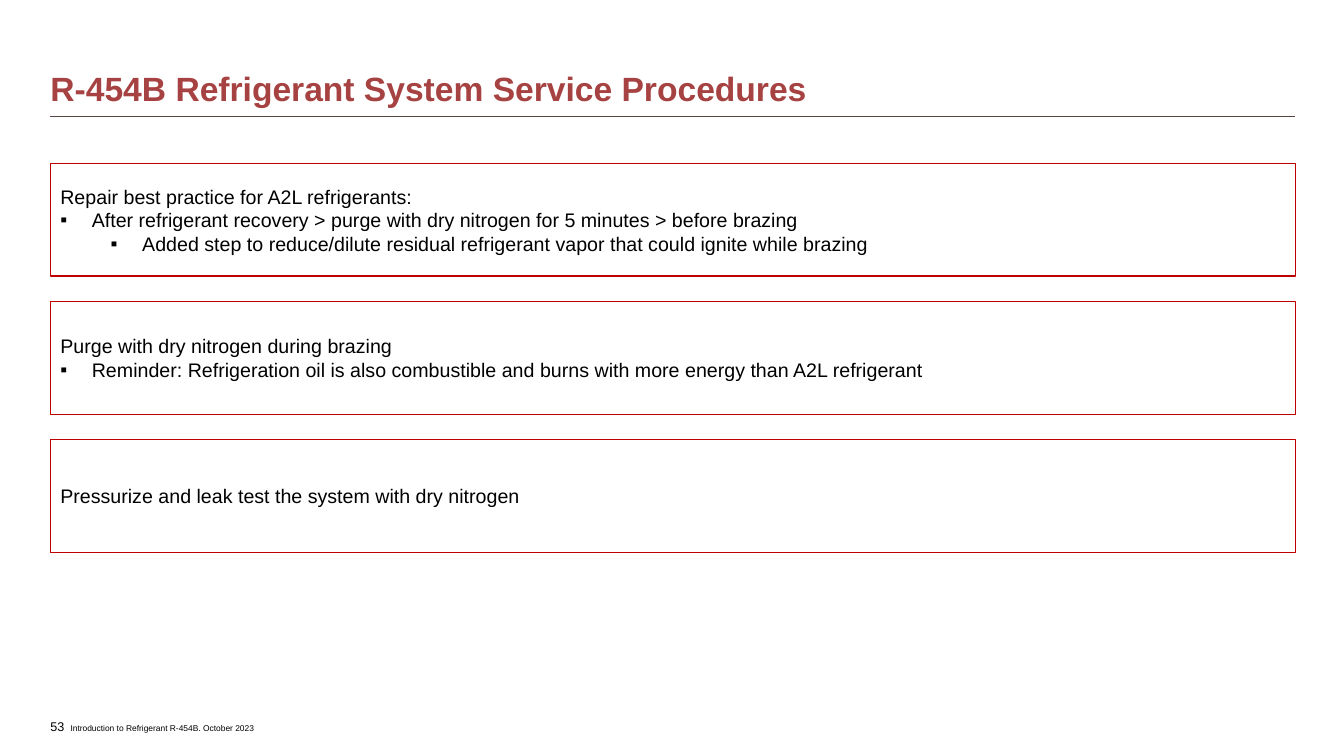
"""Build the R-454B refrigerant service procedures slide."""
from pptx import Presentation
from pptx.dml.color import RGBColor
from pptx.enum.shapes import MSO_CONNECTOR as Connector, MSO_SHAPE as Shape
from pptx.enum.text import MSO_ANCHOR as Anchor, MSO_AUTO_SIZE as AutoSize, PP_ALIGN as Align
from pptx.oxml.ns import qn
from pptx.util import Pt
from lxml.etree import SubElement

TITLE_RED = RGBColor(0xA6, 0x42, 0x41)
BOX_RED = RGBColor(0xC0, 0x00, 0x00)
RULE_GRAY = RGBColor(0x52, 0x47, 0x43)
BLACK = RGBColor(0x00, 0x00, 0x00)

LEFT, WIDTH = 36, 889.2
BOX_TOP, BOX_HEIGHT, BOX_PITCH = 116.64, 80.64, 98.64
HANGING = 22.5
LEVEL_STEP = 36

PROCEDURES = [
    [
        ("Repair best practice for A2L refrigerants:", None),
        ("After refrigerant recovery > purge with dry nitrogen for 5 minutes > before brazing", 0),
        ("Added step to reduce/dilute residual refrigerant vapor that could ignite while brazing", 1),
    ],
    [
        ("Purge with dry nitrogen during brazing", None),
        ("Reminder: Refrigeration oil is also combustible and burns with more energy than A2L refrigerant", 0),
    ],
    [("Pressurize and leak test the system with dry nitrogen", None)],
]


class SlideBuilder:
    """Hold the slide and its text style, and add each kind of element."""

    font_name = "Arial"
    flush_frame = {"margin_left": 0, "margin_top": 0, "margin_right": 0, "margin_bottom": 0,
                   "word_wrap": True, "auto_size": AutoSize.NONE}

    def __init__(self, slide):
        self.slide = slide

    def apply(self, target, formats):
        for name, value in formats.items():
            setattr(target, name, value)

    def place(self, shape, left, top, width, height):
        self.apply(shape, {"left": Pt(left), "top": Pt(top),
                           "width": Pt(width), "height": Pt(height)})

    def fill_paragraph(self, paragraph, text, size, color=BLACK, bold=False):
        paragraph.text = text
        paragraph.alignment = Align.LEFT
        self.apply(paragraph.font, {"name": self.font_name, "size": Pt(size), "bold": bold})
        paragraph.font.color.rgb = color

    def title(self, text):
        title = self.slide.shapes.title
        self.place(title, LEFT, 15.12, WIDTH, 62.64)
        self.apply(title.text_frame, {**self.flush_frame, "vertical_anchor": Anchor.BOTTOM})
        paragraph = title.text_frame.paragraphs[0]
        self.fill_paragraph(paragraph, text, 24, TITLE_RED, bold=True)
        paragraph.line_spacing = 0.9

    def rule(self, top):
        line = self.slide.shapes.add_connector(
            Connector.STRAIGHT, Pt(LEFT), Pt(top), Pt(LEFT + WIDTH), Pt(top))
        line.line.color.rgb = RULE_GRAY
        line.line.width = Pt(0.75)
        SubElement(line._element.spPr, qn("a:effectLst"))

    def label(self, text, left, top, width, height, size, anchor):
        box = self.slide.shapes.add_textbox(Pt(left), Pt(top), Pt(width), Pt(height))
        self.apply(box.text_frame, {**self.flush_frame, "vertical_anchor": anchor})
        self.fill_paragraph(box.text_frame.paragraphs[0], text, size)

    def bullet(self, paragraph, level):
        paragraph.level = level
        properties = paragraph._p.get_or_add_pPr()
        properties.set("marL", str(Pt(HANGING + level * LEVEL_STEP)))
        properties.set("indent", str(Pt(-HANGING)))
        SubElement(properties, qn("a:buFont"), typeface=self.font_name)
        SubElement(properties, qn("a:buChar"), char="▪")

    def procedure_box(self, lines, top):
        box = self.slide.shapes.add_shape(
            Shape.RECTANGLE, Pt(LEFT), Pt(top), Pt(WIDTH), Pt(BOX_HEIGHT))
        box.shadow.inherit = False
        box.fill.background()
        box.line.color.rgb = BOX_RED
        box.line.width = Pt(1)
        frame = box.text_frame
        self.apply(frame, {"word_wrap": True, "vertical_anchor": Anchor.MIDDLE})
        for index, (text, level) in enumerate(lines):
            paragraph = frame.add_paragraph() if index else frame.paragraphs[0]
            if level is not None:
                self.bullet(paragraph, level)
            self.fill_paragraph(paragraph, text, 14)


def main():
    presentation = Presentation()
    presentation.slide_width, presentation.slide_height = Pt(960), Pt(540)
    builder = SlideBuilder(presentation.slides.add_slide(presentation.slide_layouts[5]))
    builder.rule(83)
    builder.label("53", LEFT, 510.5, 28, 17.3, 9, Anchor.MIDDLE)
    builder.label("Introduction to Refrigerant R-454B. October 2023",
                  50.4, 516.25, 158.4, 7.2, 6, Anchor.TOP)
    builder.title("R-454B Refrigerant System Service Procedures")
    for index, lines in enumerate(PROCEDURES):
        builder.procedure_box(lines, BOX_TOP + index * BOX_PITCH)
    presentation.save("out.pptx")


if __name__ == "__main__":
    main()
